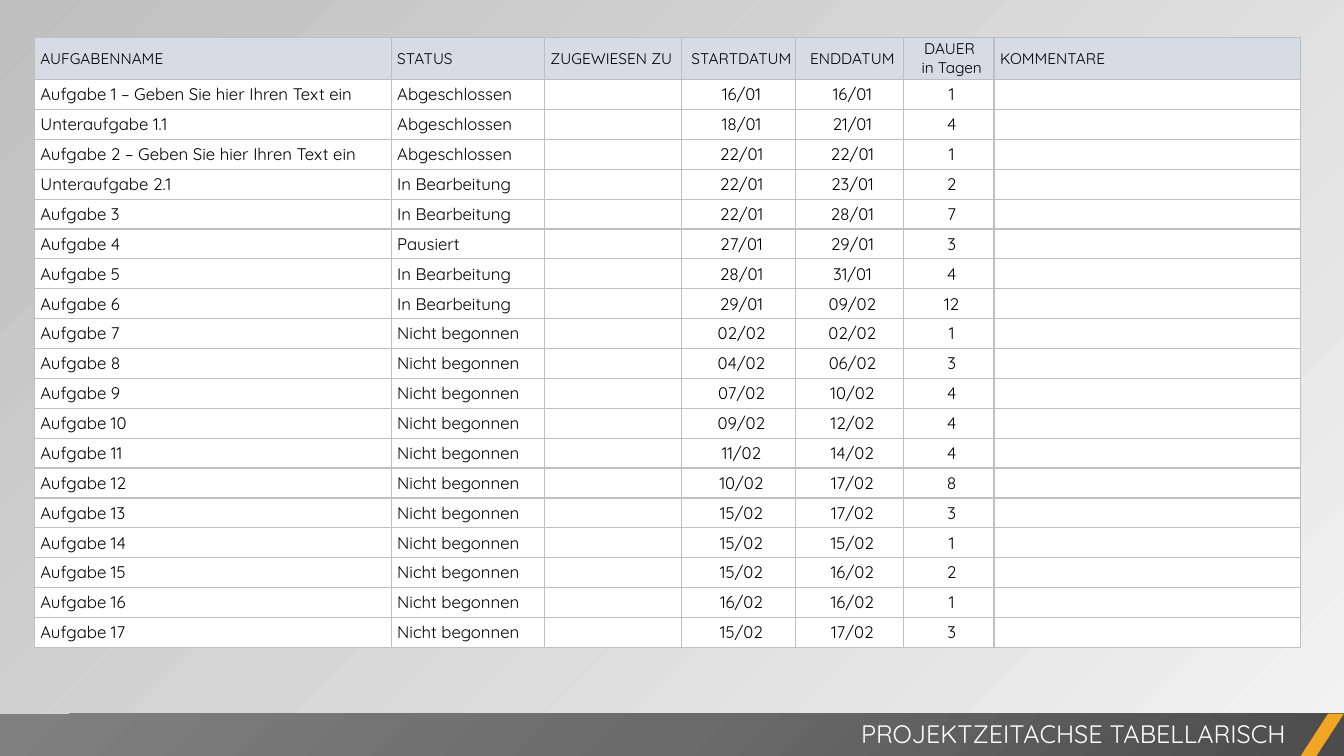
from lxml.etree import SubElement
from pptx import Presentation
from pptx.dml.color import RGBColor
from pptx.enum.shapes import MSO_SHAPE
from pptx.enum.text import MSO_ANCHOR, PP_ALIGN
from pptx.oxml import parse_xml
from pptx.oxml.ns import nsdecls, qn
from pptx.util import Inches, Pt

BLACK = RGBColor(0x00, 0x00, 0x00)
WHITE = RGBColor(0xFF, 0xFF, 0xFF)
PALE = RGBColor(0xF2, 0xF2, 0xF2)
GREY = RGBColor(0xBF, 0xBF, 0xBF)
BLUE = RGBColor(0xD6, 0xDC, 0xE5)
GOLD = RGBColor(0xF0, 0xA6, 0x22)
FONT = "Quicksand"

HEAD = ["AUFGABENNAME", "STATUS", "ZUGEWIESEN ZU", "STARTDATUM",
        "ENDDATUM", "DAUER \nin Tagen", "KOMMENTARE"]
DONE, BUSY, HOLD, OPEN = "Abgeschlossen", "In Bearbeitung", "Pausiert", "Nicht begonnen"
TASKS = [
    ("Aufgabe 1 – Geben Sie hier Ihren Text ein", DONE, "16/01", "16/01", 1),
    ("Unteraufgabe 1.1", DONE, "18/01", "21/01", 4),
    ("Aufgabe 2 – Geben Sie hier Ihren Text ein", DONE, "22/01", "22/01", 1),
    ("Unteraufgabe 2.1", BUSY, "22/01", "23/01", 2),
    ("Aufgabe 3", BUSY, "22/01", "28/01", 7),
    ("Aufgabe 4", HOLD, "27/01", "29/01", 3),
    ("Aufgabe 5", BUSY, "28/01", "31/01", 4),
    ("Aufgabe 6", BUSY, "29/01", "09/02", 12),
    ("Aufgabe 7", OPEN, "02/02", "02/02", 1),
    ("Aufgabe 8", OPEN, "04/02", "06/02", 3),
    ("Aufgabe 9", OPEN, "07/02", "10/02", 4),
    ("Aufgabe 10", OPEN, "09/02", "12/02", 4),
    ("Aufgabe 11", OPEN, "11/02", "14/02", 4),
    ("Aufgabe 12", OPEN, "10/02", "17/02", 8),
    ("Aufgabe 13", OPEN, "15/02", "17/02", 3),
    ("Aufgabe 14", OPEN, "15/02", "15/02", 1),
    ("Aufgabe 15", OPEN, "15/02", "16/02", 2),
    ("Aufgabe 16", OPEN, "16/02", "16/02", 1),
    ("Aufgabe 17", OPEN, "15/02", "17/02", 3),
]
COLS = [3.54, 1.52, 1.36, 1.13, 1.07, 0.9, 3.04]
CENTRED = (3, 4, 5)

deck = Presentation()
deck.slide_width, deck.slide_height = Inches(13.33), Inches(7.5)
wide, high = deck.slide_width, deck.slide_height
slide = deck.slides.add_slide(deck.slide_layouts[6])

back = slide.background.fill
back.gradient()
back.gradient_angle = 135
for stop, tone in zip(back.gradient_stops, (PALE, GREY)):
    stop.color.rgb = tone


def style(para, size, color, align):
    para.alignment = align
    for run in para.runs:
        run.font.name = FONT
        run.font.size = Pt(size)
        run.font.color.rgb = color


def edge(cell):
    props = cell._tc.get_or_add_tcPr()
    for side in ("lnL", "lnR", "lnT", "lnB"):
        line = SubElement(props, qn(f"a:{side}"), w=str(Pt(1)))
        fill = SubElement(line, qn("a:solidFill"))
        SubElement(fill, qn("a:srgbClr"), val=str(GREY))


rows = [HEAD] + [[name, state, "", start, end, str(days), ""]
                 for name, state, start, end, days in TASKS]
top = Inches(0.42)
tall = Inches(6.06)
table = slide.shapes.add_table(len(rows), len(COLS), Inches(0.34), Inches(0.37),
                               Inches(sum(COLS)), tall).table
table.first_row = table.horz_banding = False
for col, width in zip(table.columns, COLS):
    col.width = Inches(width)
for r, row in enumerate(rows):
    table.rows[r].height = (tall - top) // len(TASKS) if r else top
    size = 12 if r else 11
    for c, text in enumerate(row):
        cell = table.cell(r, c)
        edge(cell)
        cell.fill.solid()
        cell.fill.fore_color.rgb = WHITE if r else BLUE
        cell.vertical_anchor = MSO_ANCHOR.MIDDLE
        cell.margin_left = Inches(0.06)
        cell.margin_right = cell.margin_top = cell.margin_bottom = 0
        cell.text_frame.text = text
        for para in cell.text_frame.paragraphs:
            style(para, size, BLACK, PP_ALIGN.CENTER if c in CENTRED else PP_ALIGN.LEFT)
            if not text:
                SubElement(para._p, qn("a:endParaRPr"), sz=str(size * 100))

foot = Inches(0.42)
bar = slide.shapes.add_shape(MSO_SHAPE.RECTANGLE, 0, high - foot, wide, foot)
bar.fill.gradient()
shade = bar._element.spPr.find(qn("a:gradFill"))
stops = "".join(f'<a:gs pos="{pos}000"><a:srgbClr val="{tone}"/></a:gs>'
                for pos, tone in ((0, "4C4C4C"), (50, "6B6B6B"), (100, "808080")))
shade.getparent().replace(shade, parse_xml(
    f'<a:gradFill {nsdecls("a")} rotWithShape="1"><a:gsLst>{stops}</a:gsLst>'
    '<a:path path="circle"><a:fillToRect l="100000" t="100000"/></a:path></a:gradFill>'))

slash = Inches(0.43)
mark = slide.shapes.add_shape(MSO_SHAPE.PARALLELOGRAM, wide - slash, high - foot, slash, foot)
mark.adjustments[0] = 0.65
mark.fill.solid()
mark.fill.fore_color.rgb = GOLD
for shape in (bar, mark):
    shape.line.fill.background()
    shape.shadow.inherit = False

title = slide.shapes.add_textbox(Inches(5.25), Inches(7.08), Inches(7.6), Inches(0.4)).text_frame
title.word_wrap = True
title.text = "PROJEKTZEITACHSE TABELLARISCH"
style(title.paragraphs[0], 18, WHITE, PP_ALIGN.RIGHT)

deck.save("out.pptx")
